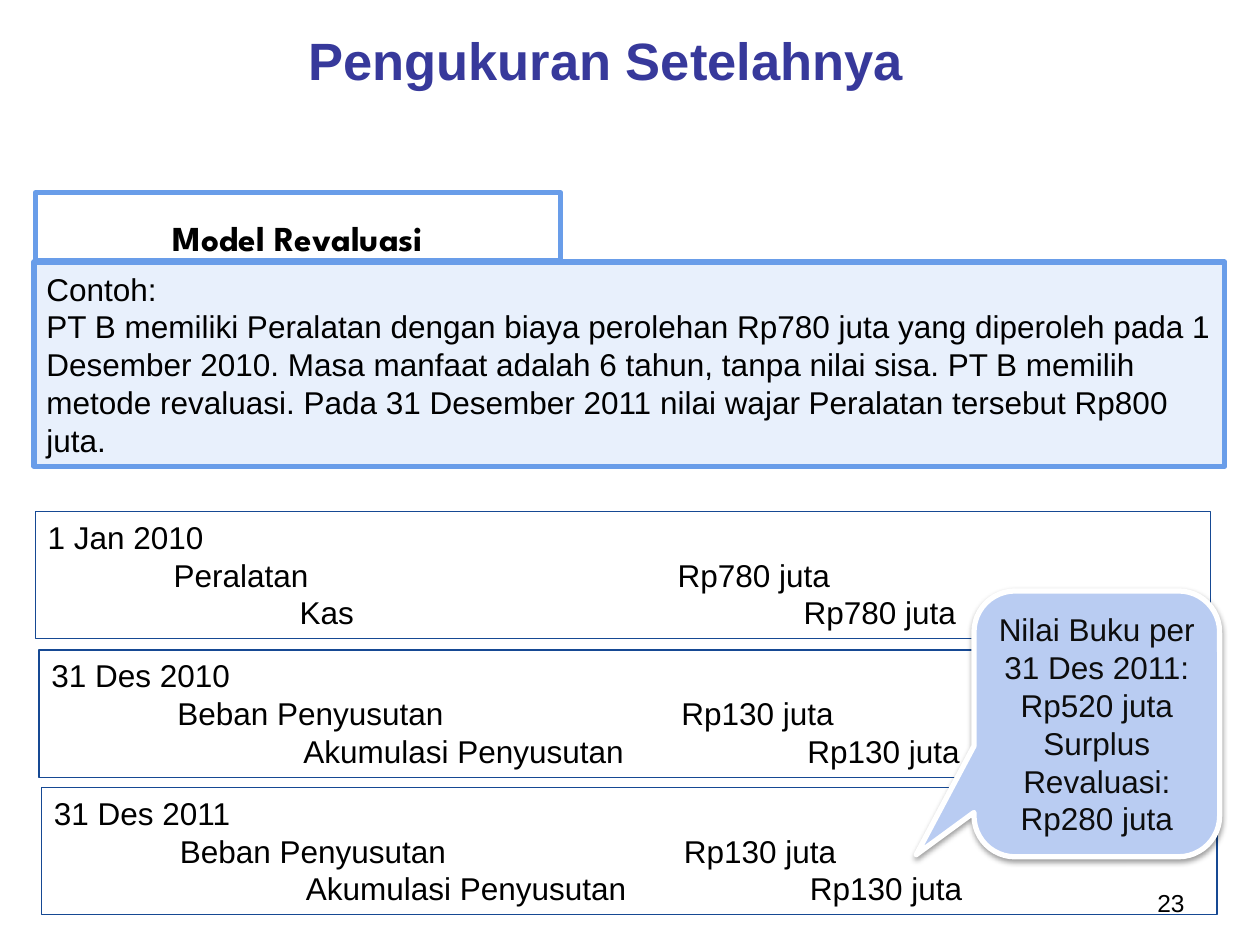
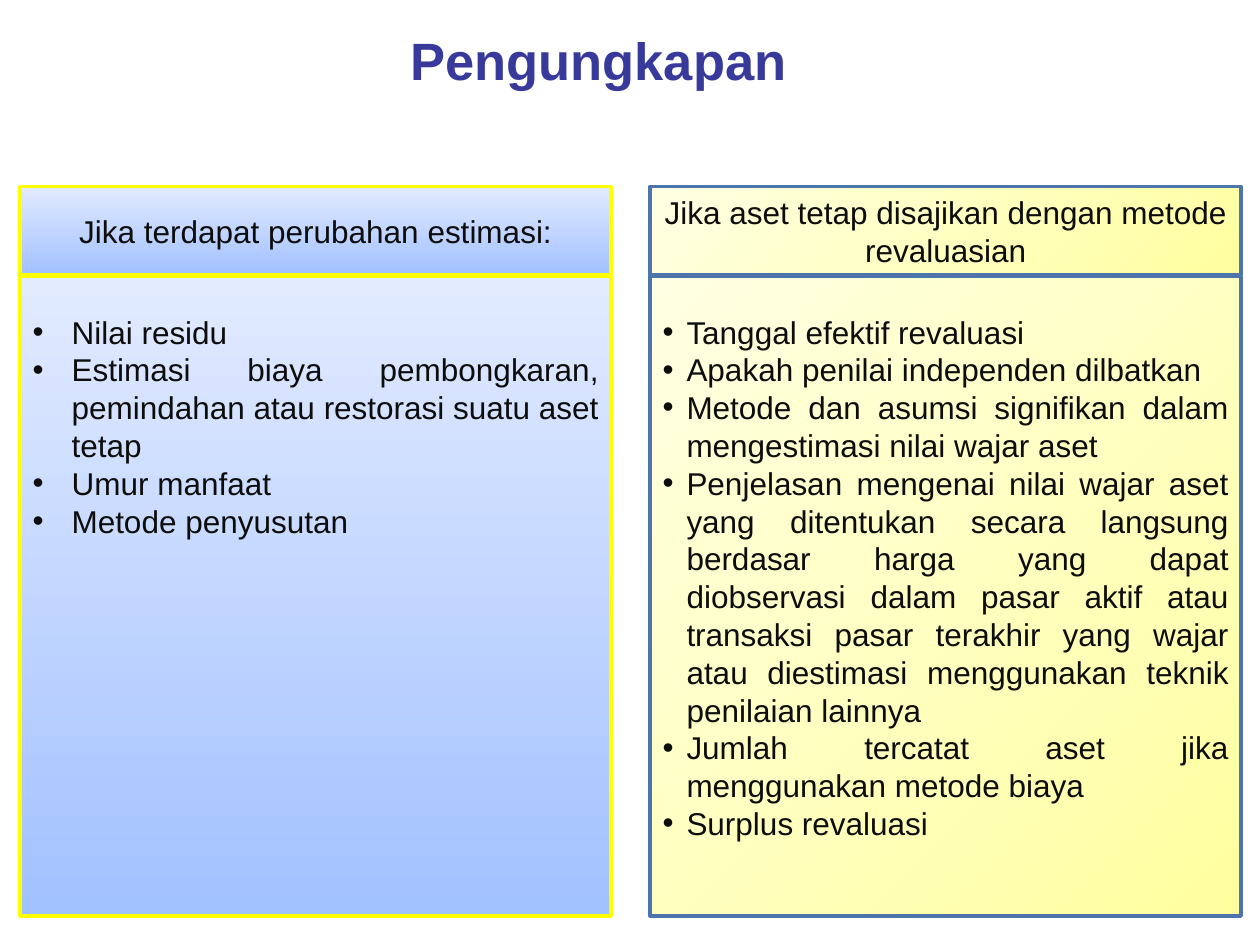
from dataclasses import dataclass

import pptx
import pptx.dml.color
import pptx.enum.shapes
import pptx.enum.text
import pptx.oxml
import pptx.oxml.ns
import pptx.util
from lxml import etree

Inches = pptx.util.Inches
Pt = pptx.util.Pt
RGBColor = pptx.dml.color.RGBColor
Align = pptx.enum.text.PP_ALIGN
Anchor = pptx.enum.text.MSO_ANCHOR
ShapeKind = pptx.enum.shapes.MSO_SHAPE
qn = pptx.oxml.ns.qn


@dataclass(frozen=True)
class Theme:
    font: str = "Arial"
    label_font: str = "League Spartan"
    title_size: int = 30
    label_size: int = 20
    body_size: int = 18
    number_size: int = 14
    title: str = "37399B"
    black: str = "000000"
    ink: str = "0D0D0D"
    white: str = "FFFFFF"
    frame: str = "699DE9"
    example: str = "E8F0FC"
    entry_line: str = "164993"
    callout: str = "B9CCF2"
    yellow_line: str = "FFFF00"
    blue_line: str = "4E74AC"
    blue_gradient: tuple = ("A2C1FF", "E2EBFF")
    yellow_gradient: tuple = ("FFFFA0", "FFFFE3")


theme = Theme()


def write(shape, lines, size=theme.body_size, color=theme.black, font=theme.font,
          bold=False, align=Align.LEFT, anchor=Anchor.MIDDLE):
    """Fill the shape with one formatted paragraph per line and return the paragraphs."""
    frame = shape.text_frame
    frame.word_wrap = True
    frame.vertical_anchor = anchor
    for index, line in enumerate(lines):
        paragraph = frame.paragraphs[0] if index == 0 else frame.add_paragraph()
        paragraph.alignment = align
        run = paragraph.add_run()
        run.text = line
        run.font.name = font
        run.font.size = Pt(size)
        run.font.bold = bold
        run.font.color.rgb = RGBColor.from_string(color)
    return frame.paragraphs


def add_box(slide, place, line, width, fill=None, angle=90, kind=ShapeKind.RECTANGLE):
    """Add a shape; fill is None, one colour, or a pair of gradient colours."""
    shape = slide.shapes.add_shape(kind, *map(Inches, place))
    shape.shadow.inherit = False
    shape.line.color.rgb = RGBColor.from_string(line)
    shape.line.width = Pt(width)
    if fill is None:
        shape.fill.background()
    elif isinstance(fill, str):
        shape.fill.solid()
        shape.fill.fore_color.rgb = RGBColor.from_string(fill)
    else:
        shape.fill.gradient()
        shape.fill.gradient_angle = angle
        for stop, color in zip(shape.fill.gradient_stops, fill):
            stop.color.rgb = RGBColor.from_string(color)
    return shape


presentation = pptx.Presentation()
presentation.slide_width = Inches(10)
presentation.slide_height = Inches(7.5)

slides = []
for title_text in ("Pengukuran Setelahnya", "Pengungkapan "):
    slide = presentation.slides.add_slide(presentation.slide_layouts[5])
    title = slide.shapes.title
    title.left, title.top, title.width, title.height = map(Inches, (0.31, 0.16, 9, 0.62))
    write(title, [title_text], theme.title_size, theme.title, bold=True, align=Align.CENTER)
    slides.append(slide)
measurement_slide, disclosure_slide = slides

# Revaluation model
page_number = measurement_slide.shapes.add_textbox(*map(Inches, (7.17, 7, 2.33, 0.35)))
write(page_number, ["23"], theme.number_size, align=Align.RIGHT, anchor=Anchor.TOP)

model_label = add_box(measurement_slide, (0.28, 1.53, 4.17, 0.54), theme.frame, 3, theme.white)
label_paragraphs = write(model_label, ["Model Revaluasi"], theme.label_size,
                         font=theme.label_font, bold=True, align=Align.CENTER)
label_paragraphs[0].line_spacing = 1.5

example = add_box(measurement_slide, (0.27, 2.08, 9.45, 1.62), theme.frame, 3, theme.example)
write(example, [
    "Contoh:",
    "PT B memiliki Peralatan dengan biaya perolehan Rp780 juta yang diperoleh pada 1 "
    "Desember 2010. Masa manfaat adalah 6 tahun, tanpa nilai sisa. PT B memilih metode "
    "revaluasi. Pada 31 Desember 2011 nilai wajar Peralatan tersebut Rp800 juta.",
])

journal_entries = [
    (0.28, 4.06, "1 Jan 2010", "Peralatan", "Kas", "Rp780 juta"),
    (0.31, 5.16, "31 Des 2010", "Beban Penyusutan", "Akumulasi Penyusutan", "Rp130 juta"),
    (0.33, 6.25, "31 Des 2011", "Beban Penyusutan", "Akumulasi Penyusutan", "Rp130 juta"),
]
debit_stops, credit_stops = (1, 5), (2, 6)
for left, top, date, debit, credit, amount in journal_entries:
    entry = add_box(measurement_slide, (left, top, 9.33, 1.01), theme.entry_line, 0.75)
    paragraphs = write(entry, [date, f"\t{debit}\t{amount}", f"\t{credit}\t{amount}"],
                       anchor=Anchor.TOP)
    for paragraph, stops in zip(paragraphs[1:], (debit_stops, credit_stops)):
        properties = paragraph._p.get_or_add_pPr()
        tab_list = etree.SubElement(properties, qn("a:tabLst"))
        for stop in stops:
            etree.SubElement(tab_list, qn("a:tab"), pos=str(Inches(stop)), algn="l")

callout = add_box(measurement_slide, (7.73, 4.69, 1.95, 2.11), theme.white, 3, theme.callout,
                  kind=ShapeKind.ROUNDED_RECTANGULAR_CALLOUT)
for index, adjustment in enumerate((-0.735, 0.492, 0.167)):
    callout.adjustments[index] = adjustment
effects = callout._element.spPr.find(qn("a:effectLst"))
shadow = etree.SubElement(effects, qn("a:outerShdw"), blurRad=str(Pt(3.1)),
                          dist=str(Pt(1.6)), dir=str(90 * 60000), rotWithShape="0")
shadow_color = etree.SubElement(shadow, qn("a:srgbClr"), val=theme.black)
etree.SubElement(shadow_color, qn("a:alpha"), val="38000")
write(callout, ["Nilai Buku per 31 Des 2011:", "Rp520 juta", "Surplus Revaluasi:", "Rp280 juta"],
      color=theme.ink, align=Align.CENTER)

# Disclosure panels
panels = [
    (0.16, theme.blue_gradient, 90, theme.yellow_line, 0.31,
     "Jika terdapat perubahan estimasi:",
     ["Nilai residu",
      "Estimasi biaya pembongkaran, pemindahan atau restorasi suatu aset tetap",
      "Umur manfaat",
      "Metode penyusutan"]),
    (5.16, theme.yellow_gradient, 135, theme.blue_line, 0.19,
     "Jika aset tetap disajikan dengan metode revaluasian",
     ["Tanggal efektif revaluasi",
      "Apakah penilai independen dilbatkan",
      "Metode dan asumsi signifikan dalam mengestimasi nilai wajar aset",
      "Penjelasan mengenai nilai wajar aset yang ditentukan secara langsung berdasar harga "
      "yang dapat diobservasi dalam pasar aktif atau transaksi pasar terakhir yang wajar "
      "atau diestimasi menggunakan teknik penilaian lainnya",
      "Jumlah tercatat aset jika menggunakan metode biaya",
      "Surplus revaluasi"]),
]
for left, gradient, angle, line, indent, heading, items in panels:
    body = add_box(disclosure_slide, (left, 2.19, 4.69, 5.08), line, 2, gradient, angle)
    body.text_frame.margin_top = Inches(0.29)
    for paragraph in write(body, items, color=theme.ink, align=Align.JUSTIFY, anchor=Anchor.TOP):
        properties = paragraph._p.get_or_add_pPr()
        properties.set("marL", str(Inches(indent)))
        properties.set("indent", str(-Inches(indent)))
        etree.SubElement(properties, qn("a:buFont"), typeface=theme.font)
        etree.SubElement(properties, qn("a:buChar"), char="•")
    header = add_box(disclosure_slide, (left, 1.48, 4.69, 0.7), line, 2, gradient, angle)
    write(header, [heading], color=theme.ink, align=Align.CENTER)

presentation.save("out.pptx")
